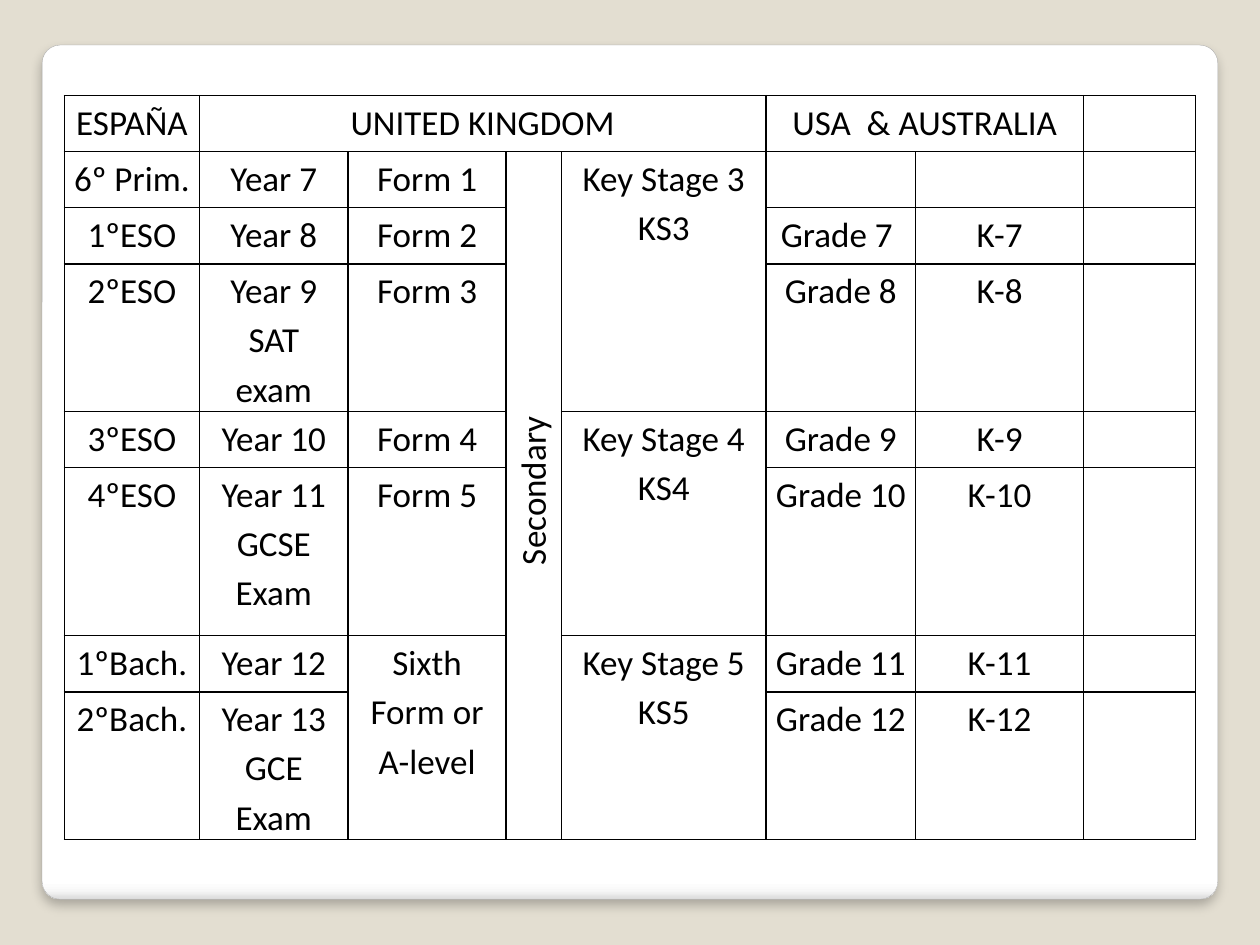
from lxml import etree
from pptx import Presentation
from pptx.dml.color import RGBColor
from pptx.enum.shapes import MSO_SHAPE
from pptx.enum.text import PP_ALIGN
from pptx.oxml import parse_xml
from pptx.oxml.ns import nsdecls, qn
from pptx.util import Cm, Pt

ROUNDED = MSO_SHAPE.ROUNDED_RECTANGLE
CENTER = PP_ALIGN.CENTER
BEIGE = RGBColor(0xE3, 0xDE, 0xD1)
WHITE = RGBColor(0xFF, 0xFF, 0xFF)
PALE_GREY = RGBColor(0xF7, 0xF7, 0xF7)
LIGHT_GREY = RGBColor(0xDA, 0xDA, 0xDA)
GREY = RGBColor(0xA4, 0xA4, 0xA4)
BLACK = RGBColor(0, 0, 0)

# Lengths in centimetres
COLUMN_WIDTHS = [2.72, 3.0, 3.18, 1.12, 4.12, 3.02, 3.38, 2.26]
ROW_HEIGHTS = [1.13, 1.13, 1.13, 2.26, 1.13, 3.39, 1.13, 2.26]

# One list per row; a line break starts a new paragraph
ROWS = [
    ["ESPAÑA", "UNITED KINGDOM", "", "", "", "USA  & AUSTRALIA", "", ""],
    ["6º Prim.", "Year 7", "Form 1", "Secondary", "Key Stage 3\nKS3", "", "", ""],
    ["1ºESO", "Year 8", "Form 2", "", "", "Grade 7 ", "K-7", ""],
    ["2ºESO", "Year 9\nSAT exam", "Form 3", "", "", "Grade 8", "K-8", ""],
    ["3ºESO", "Year 10", "Form 4", "", "Key Stage 4\nKS4", "Grade 9", "K-9", ""],
    ["4ºESO", "Year 11\nGCSE Exam", "Form 5", "", "", "Grade 10", "K-10", ""],
    ["1ºBach.", "Year 12", "Sixth Form or A-level", "", "Key Stage 5\nKS5",
     "Grade 11", "K-11", ""],
    ["2ºBach.", "Year 13\nGCE Exam", "", "", "", "Grade 12", "K-12", ""],
]
# First row, first column, last row, last column
MERGES = [(0, 1, 0, 4), (0, 5, 0, 6), (1, 3, 7, 3), (1, 4, 3, 4),
          (4, 4, 5, 4), (6, 4, 7, 4), (6, 2, 7, 2)]


def add_borders(cell):
    properties = cell._tc.get_or_add_tcPr()
    for side in ("lnL", "lnR", "lnT", "lnB"):
        line = etree.SubElement(properties, qn(f"a:{side}"), w=str(Pt(1)))
        fill = etree.SubElement(line, qn("a:solidFill"))
        etree.SubElement(fill, qn("a:srgbClr"), val=str(BLACK))


def write_text(cell, text):
    cell.margin_left = cell.margin_right = Cm(0.19)
    cell.margin_top = cell.margin_bottom = 0
    frame = cell.text_frame
    for index, line in enumerate(text.split("\n")):
        para = frame.add_paragraph() if index else frame.paragraphs[0]
        para.alignment = CENTER
        para.line_spacing = 1.15
        span = para.add_run()
        span.text = line
        span.font.name = "Calibri"
        span.font.size = Pt(20)
        span.font.color.rgb = BLACK


deck = Presentation()
deck.slide_width, deck.slide_height = Cm(25.4), Cm(19.05)
page = deck.slides.add_slide(deck.slide_layouts[6])
page.background.fill.solid()
page.background.fill.fore_color.rgb = BEIGE

# White panel with a shaded lower edge and a soft shadow
panel = page.shapes.add_shape(ROUNDED, Cm(0.85), Cm(0.91), Cm(23.7), Cm(17.22))
panel.adjustments[0] = 0.021
panel.line.color.rgb = GREY
panel.line.width = Pt(0.16)
panel.fill.gradient()
gradient = panel._element.spPr.find(qn("a:gradFill"))
stops = gradient.find(qn("a:gsLst"))
stops.clear()
for percent, color in [(0, WHITE), (98, WHITE), (99, PALE_GREY), (100, LIGHT_GREY)]:
    stop = etree.SubElement(stops, qn("a:gs"), pos=str(percent * 1000))
    etree.SubElement(stop, qn("a:srgbClr"), val=str(color))
gradient.find(qn("a:lin")).set("ang", str(90 * 60000))
panel._element.spPr.append(parse_xml(
    f'<a:effectLst {nsdecls("a")}>'
    f'<a:outerShdw blurRad="{Pt(6)}" dist="{Pt(4)}" dir="5400000" rotWithShape="0">'
    f'<a:srgbClr val="{BLACK}"><a:alpha val="25000"/></a:srgbClr>'
    '</a:outerShdw></a:effectLst>'))

# School years table
table = page.shapes.add_table(
    len(ROWS), len(COLUMN_WIDTHS), Cm(1.3), Cm(1.93),
    Cm(sum(COLUMN_WIDTHS)), Cm(sum(ROW_HEIGHTS))).table
table.first_row = table.horz_banding = False
for column, width in zip(table.columns, COLUMN_WIDTHS):
    column.width = Cm(width)
for row, height, texts in zip(table.rows, ROW_HEIGHTS, ROWS):
    row.height = Cm(height)
    for cell, text in zip(row.cells, texts):
        add_borders(cell)
        cell.fill.background()
        if text:
            write_text(cell, text)
for top, left, bottom, right in MERGES:
    table.cell(top, left).merge(table.cell(bottom, right))

# Upright label of the secondary column
secondary = table.cell(1, 3)
secondary._tc.get_or_add_tcPr().set("vert", "vert270")
secondary.text_frame.paragraphs[0]._p.get_or_add_pPr().set("marL", str(Cm(0.2)))

deck.save("out.pptx")
